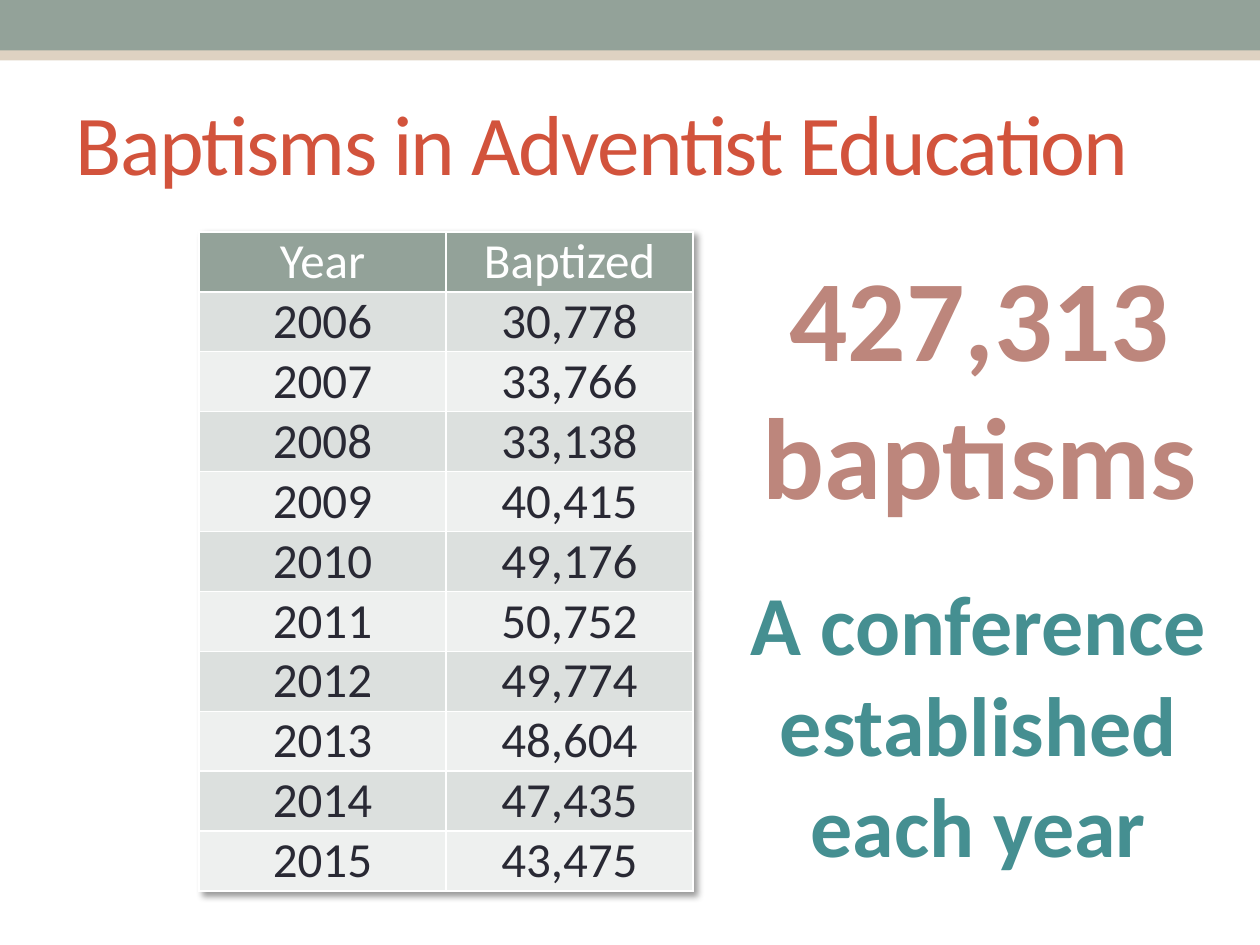
from lxml import etree
from pptx import Presentation
from pptx.dml.color import RGBColor
from pptx.enum.shapes import MSO_SHAPE
from pptx.enum.text import MSO_ANCHOR, MSO_AUTO_SIZE, PP_ALIGN
from pptx.oxml import parse_xml
from pptx.oxml.ns import nsdecls, qn
from pptx.util import Inches, Pt

SAGE = RGBColor(0x93, 0xA2, 0x99)
SAND = RGBColor(0xDE, 0xD2, 0xC2)
WHITE = RGBColor(0xFF, 0xFF, 0xFF)
INK = RGBColor(0x29, 0x29, 0x34)
ORANGE = RGBColor(0xD2, 0x53, 0x3C)
ROSE = RGBColor(0xBD, 0x86, 0x7C)
TEAL = RGBColor(0x45, 0x8F, 0x91)
ROW_FILLS = [RGBColor(0xEE, 0xF0, 0xEF), RGBColor(0xDC, 0xE0, 0xDE)]

BAPTISMS = ["30,778", "33,766", "33,138", "40,415", "49,176",
            "50,752", "49,774", "48,604", "47,435", "43,475"]
ROWS = [("Year", "Baptized")]
ROWS += [(str(year), count) for year, count in enumerate(BAPTISMS, 2006)]


def write(paragraph, text, size, color, bold=False, alignment=PP_ALIGN.CENTER):
    """Fill a paragraph; line feeds in the text become line breaks."""
    paragraph.text = text
    paragraph.alignment = alignment
    formats = {"name": "Calibri", "size": Pt(size), "bold": bold}
    for run in paragraph.runs:
        for name, value in formats.items():
            setattr(run.font, name, value)
        run.font.color.rgb = color


def add_white_borders(cell):
    properties = cell._tc.get_or_add_tcPr()
    for position, side in enumerate(("lnL", "lnR", "lnT", "lnB")):
        properties.insert(position, parse_xml(
            f'<a:{side} {nsdecls("a")} w="{Pt(1)}"><a:solidFill>'
            f'<a:srgbClr val="{WHITE}"/></a:solidFill></a:{side}>'))


presentation = Presentation()
presentation.slide_width = Inches(10)
presentation.slide_height = Inches(7.5)
slide = presentation.slides.add_slide(presentation.slide_layouts[5])

# Header bands
for top, color in ((0.08, SAND), (0, SAGE)):
    band = slide.shapes.add_shape(
        MSO_SHAPE.RECTANGLE, 0, Inches(top), Inches(10), Inches(0.4))
    band.shadow.inherit = False
    band.fill.solid()
    band.fill.fore_color.rgb = color
    band.line.fill.background()

# Title
title = slide.shapes.title
title.left, title.top = Inches(0.5), Inches(0.58)
title.width, title.height = Inches(9), Inches(1.08)
title.text_frame.vertical_anchor = MSO_ANCHOR.MIDDLE
title_paragraph = title.text_frame.paragraphs[0]
write(title_paragraph, "Baptisms in Adventist Education", 48.6, ORANGE,
      alignment=PP_ALIGN.LEFT)
title_paragraph.runs[0].font._element.set("spc", "-100")

# Baptisms by year
table_frame = slide.shapes.add_table(
    len(ROWS), 2, Inches(1.58), Inches(1.84), Inches(3.92), Inches(5.13))
table = table_frame.table
for row_index, values in enumerate(ROWS):
    is_header = row_index == 0
    table.rows[row_index].height = Inches(0.44 if is_header else 0.41)
    for column_index, value in enumerate(values):
        cell = table.cell(row_index, column_index)
        cell.margin_top = cell.margin_bottom = 0
        cell.fill.solid()
        cell.fill.fore_color.rgb = SAGE if is_header else ROW_FILLS[row_index % 2]
        add_white_borders(cell)
        write(cell.text_frame.paragraphs[0], value, 28,
              WHITE if is_header else INK)
table_frame.height = Inches(5.13)

effects = etree.Element(qn("a:effectLst"))
effects.append(parse_xml(
    f'<a:outerShdw {nsdecls("a")} blurRad="{Pt(4)}" dist="{Pt(3)}" dir="2700000" '
    'algn="tl" rotWithShape="0"><a:prstClr val="black"><a:alpha val="40000"/>'
    '</a:prstClr></a:outerShdw>'))
table._tbl.tblPr.insert(0, effects)

# Statements beside the table
statements = [
    (5.93, 1.9, 3.69, 2.32, ["427,313", "baptisms"], 66, ROSE),
    (5.84, 4.49, 3.85, 2.52, ["A conference\nestablished\neach year"], 48, TEAL),
]
for left, top, width, height, texts, size, color in statements:
    box = slide.shapes.add_textbox(
        Inches(left), Inches(top), Inches(width), Inches(height))
    frame = box.text_frame
    frame.word_wrap = False
    frame.auto_size = MSO_AUTO_SIZE.SHAPE_TO_FIT_TEXT
    for index, text in enumerate(texts):
        paragraph = frame.add_paragraph() if index else frame.paragraphs[0]
        write(paragraph, text, size, color, bold=True)

presentation.save("out.pptx")
